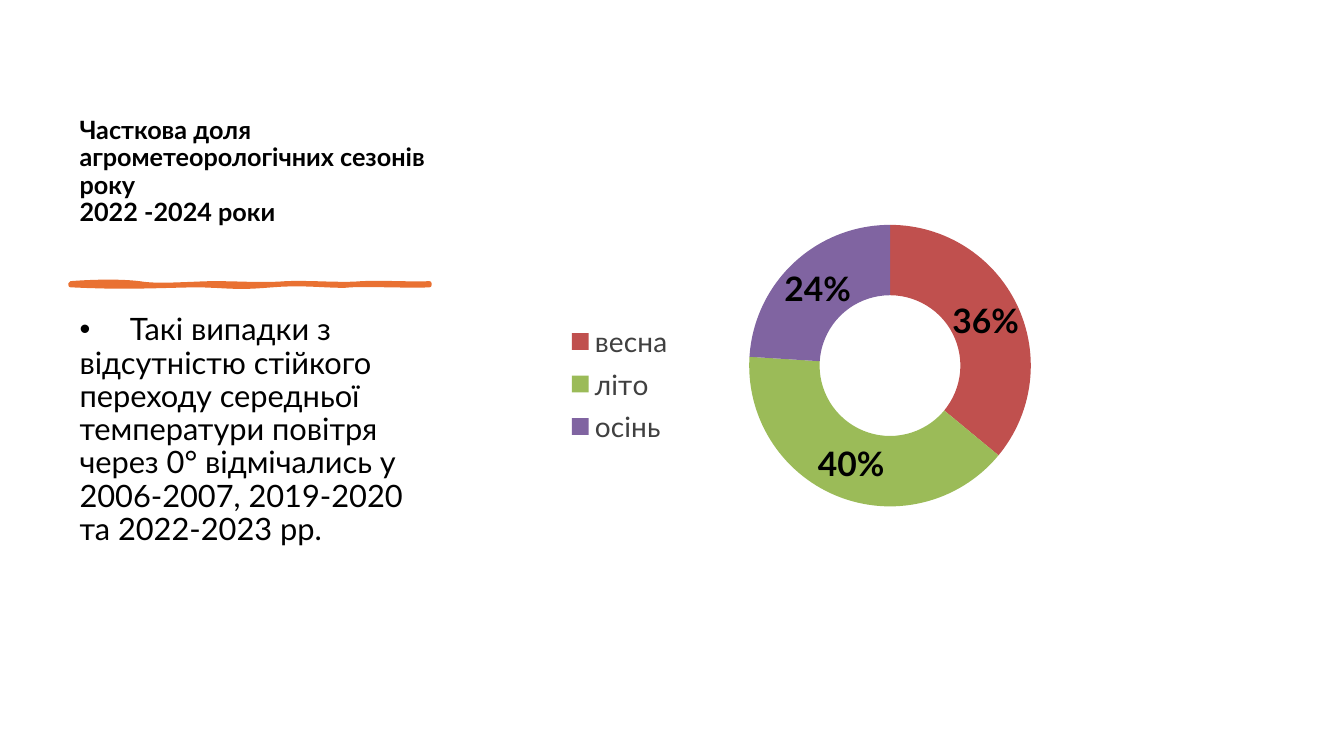
from lxml import etree
from pptx import Presentation
from pptx.chart.data import CategoryChartData
from pptx.dml.color import RGBColor
from pptx.enum.chart import XL_CHART_TYPE, XL_LEGEND_POSITION
from pptx.enum.text import MSO_ANCHOR
from pptx.oxml import parse_xml
from pptx.oxml.ns import nsdecls, qn
from pptx.util import Pt

PX = 9144  # 100 px to the inch
FONT = "Lato"
BLACK = RGBColor(0x00, 0x00, 0x00)
GREY = RGBColor(0x40, 0x40, 0x40)
ORANGE = RGBColor(0xE9, 0x71, 0x32)
SEASONS = {
    "весна": (36, RGBColor(0xC0, 0x50, 0x4E)),
    "літо": (40, RGBColor(0x9B, 0xBB, 0x58)),
    "осінь": (24, RGBColor(0x80, 0x64, 0xA1)),
}


def set_font(font, size, color=BLACK, bold=False):
    values = {"name": FONT, "size": Pt(size), "bold": bold}
    for name, value in values.items():
        setattr(font, name, value)
    font.color.rgb = color


def add_text(box, text, size, bold, anchor, bottom_margin):
    """Add a wrapped text box and return its paragraph."""
    frame = slide.shapes.add_textbox(*[n * PX for n in box]).text_frame
    values = {"word_wrap": True, "vertical_anchor": anchor, "margin_bottom": bottom_margin * PX}
    for name, value in values.items():
        setattr(frame, name, value)
    paragraph = frame.paragraphs[0]
    paragraph.text = text
    paragraph.line_spacing = 0.9
    for run in paragraph.runs:
        set_font(run.font, size, bold=bold)
    return paragraph


presentation = Presentation()
presentation.slide_width = 1333 * PX
presentation.slide_height = 750 * PX
slide = presentation.slides.add_slide(presentation.slide_layouts[6])

# Title
add_text((69, 70, 375, 188), "Часткова доля агрометеорологічних сезонів року\v2022 -2024 роки",
         18, True, MSO_ANCHOR.BOTTOM, 33)

# Hand-drawn divider: each curve is two control points and an end point
curves = [
    (97, 279, 121, 279, 138, 281), (155, 284, 177, 282, 209, 281),
    (241, 281, 260, 283, 284, 281), (308, 280, 339, 283, 359, 281),
    (379, 280, 412, 282, 426, 281), (426, 282, 426, 283, 426, 283),
    (408, 284, 364, 282, 348, 283), (332, 285, 304, 280, 270, 283),
    (235, 286, 231, 284, 199, 283), (166, 283, 132, 286, 70, 283),
]
STEPS = 10
x, y = 70, 281
points = []
for x1, y1, x2, y2, x3, y3 in curves:
    for step in range(1, STEPS + 1):
        t = step / STEPS
        u = 1 - t
        weights = (u ** 3, 3 * u * u * t, 3 * u * t * t, t ** 3)
        points.append(tuple(sum(w * n for w, n in zip(weights, axis)) * PX
                            for axis in ((x, x1, x2, x3), (y, y1, y2, y3))))
    x, y = x3, y3
builder = slide.shapes.build_freeform(70 * PX, 281 * PX)
builder.add_line_segments(points, close=True)
divider = builder.convert_to_shape()
divider.shadow.inherit = False
divider.fill.solid()
divider.fill.fore_color.rgb = ORANGE
divider.line.color.rgb = ORANGE
divider.line.width = Pt(3)

# Bulleted note
note = add_text(
    (69, 307, 375, 373),
    "\tТакі випадки з відсутністю стійкого переходу середньої температури повітря "
    "через 0° відмічались у 2006-2007, 2019-2020 та 2022-2023 рр.",
    22, False, MSO_ANCHOR.TOP, 5)
note.space_after = Pt(6)
properties = note._p.get_or_add_pPr()
properties.set("marL", "0")
properties.set("indent", str(-25 * PX))
etree.SubElement(properties, qn("a:buFont")).set("typeface", "Arial")
etree.SubElement(properties, qn("a:buChar")).set("char", "•")

# Doughnut chart of the seasons
data = CategoryChartData()
data.categories = list(SEASONS)
data.add_series("Series 1", [value for value, color in SEASONS.values()])
chart = slide.shapes.add_chart(
    XL_CHART_TYPE.DOUGHNUT, *[n * PX for n in (509, 70, 755, 610)], data).chart
chart.has_title = False
set_font(chart.font, 10)
chart.has_legend = True
chart.legend.position = XL_LEGEND_POSITION.RIGHT
chart.legend.include_in_layout = False
set_font(chart.legend.font, 20, GREY)

plot = chart.plots[0]
plot.vary_by_categories = True
plot._element.find(qn("c:holeSize")).set("val", "50")
for index, (value, color) in enumerate(SEASONS.values()):
    fill = plot.series[0].points[index].format.fill
    fill.solid()
    fill.fore_color.rgb = color
labels = plot.series[0].data_labels
label_format = {"show_percentage": True, "show_value": False, "show_legend_key": False,
                "number_format": "0%", "number_format_is_linked": False}
for name, value in label_format.items():
    setattr(labels, name, value)
set_font(labels.font, 24, bold=True)

# Fixed places for the ring and the legend, as fractions of the chart
plot_area = chart._chartSpace.chart.plotArea
for parent, inner, place in (
    (plot_area, '<c:layoutTarget val="inner"/>', (0.31, 0.09, 0.37, 0.78)),
    (chart.legend._element, "", (0.06, 0.4, 0.16, 0.22)),
):
    for old_layout in parent.findall(qn("c:layout")):
        parent.remove(old_layout)
    modes = "".join(f'<c:{axis}Mode val="edge"/>' for axis in "xy")
    sizes = "".join(f'<c:{key} val="{n}"/>' for key, n in zip("xywh", place))
    layout = parse_xml(f'<c:layout {nsdecls("c")}><c:manualLayout>{inner}{modes}{sizes}'
                       "</c:manualLayout></c:layout>")
    parent.insert(0 if parent is plot_area else 1, layout)

presentation.save("out.pptx")
